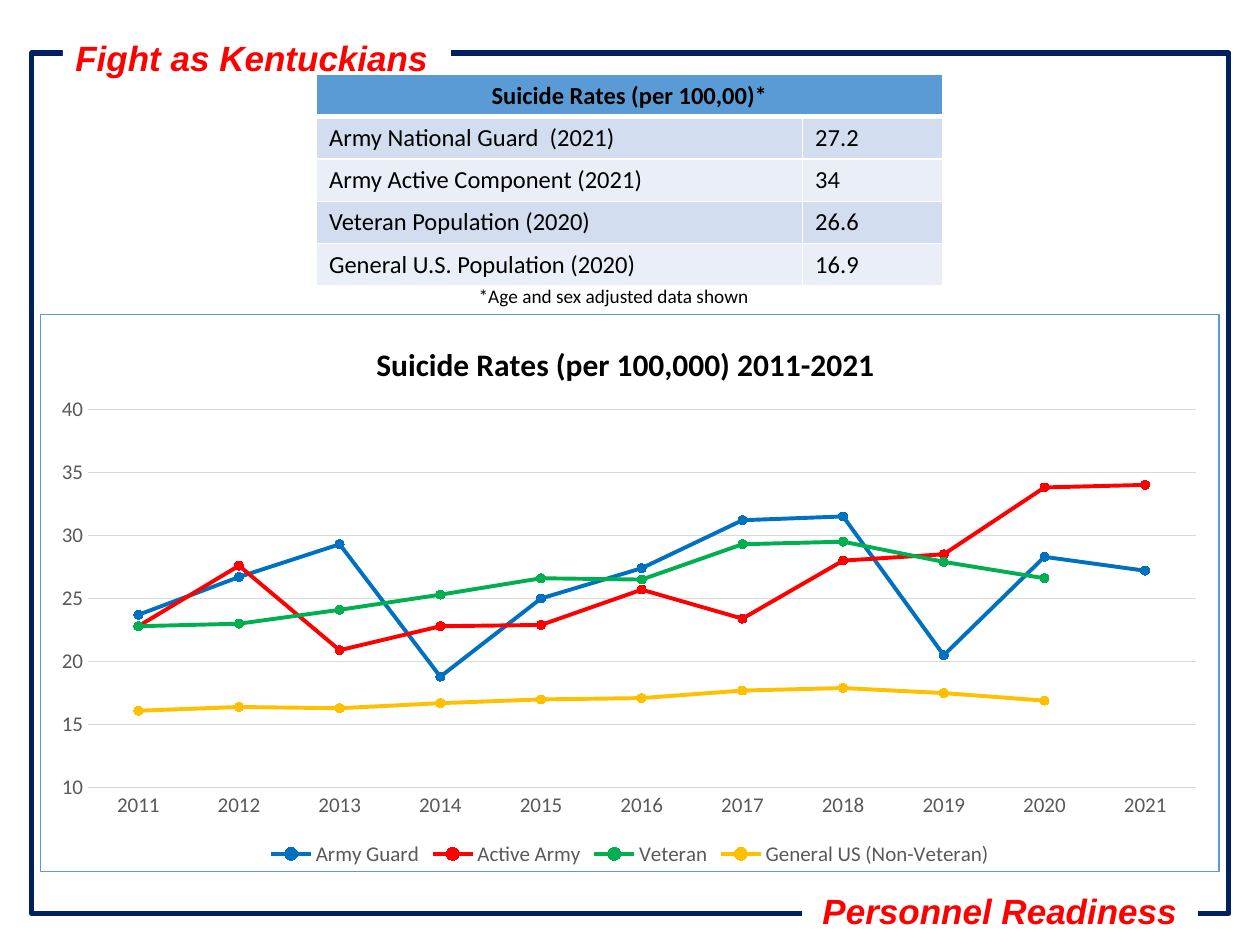
from lxml import etree
from pptx import Presentation
from pptx import util as u
from pptx.chart.data import CategoryChartData
from pptx.dml.color import RGBColor
from pptx.enum import chart as ch
from pptx.enum import shapes, text
from pptx.oxml import parse_xml
from pptx.oxml.ns import nsdecls, qn

COLORS = {
    "navy": "002060", "red": "FF0000", "white": "FFFFFF", "black": "000000",
    "header": "5B9BD5", "band_dark": "D2DEEF", "band_light": "EAEFF7",
    "grid": "D9D9D9", "axis_text": "595959",
    "guard": "0070C0", "active": "FF0000", "veteran": "00B050", "general": "FFC000",
}
MOTTO = {"name": "Arial", "size": u.Pt(20), "bold": True, "italic": True}
CELL = {"name": "Calibri", "size": u.Pt(14), "bold": False}
HEADER = {**CELL, "bold": True}
FOOTNOTE = {"name": "Calibri", "size": u.Pt(11)}
CHART_TITLE = {"name": "Calibri", "size": u.Pt(18), "bold": True}
CHART_LABEL = {"name": "Calibri", "size": u.Pt(12), "bold": False}

RATES = [
    ("Army National Guard  (2021)", "27.2"),
    ("Army Active Component (2021)", "34"),
    ("Veteran Population (2020)", "26.6"),
    ("General U.S. Population (2020)", "16.9"),
]
TRENDS = [
    ("Army Guard", "guard",
     [23.7, 26.7, 29.3, 18.8, 25, 27.4, 31.2, 31.5, 20.5, 28.3, 27.2]),
    ("Active Army", "active",
     [22.8, 27.6, 20.9, 22.8, 22.9, 25.7, 23.4, 28, 28.5, 33.8, 34]),
    ("Veteran", "veteran",
     [22.8, 23, 24.1, 25.3, 26.6, 26.5, 29.3, 29.5, 27.9, 26.6, None]),
    ("General US (Non-Veteran)", "general",
     [16.1, 16.4, 16.3, 16.7, 17, 17.1, 17.7, 17.9, 17.5, 16.9, None]),
]


def rgb(color):
    return RGBColor.from_string(COLORS[color])


def box(*lengths):
    return [u.Cm(length) for length in lengths]


def style_font(font, values, color):
    for attribute, value in values.items():
        setattr(font, attribute, value)
    font.color.rgb = rgb(color)


def paint(fill, color):
    fill.solid()
    fill.fore_color.rgb = rgb(color)


def draw_line(line, color, width):
    line.color.rgb = rgb(color)
    line.width = u.Pt(width)


def add_frame(slide):
    frame = slide.shapes.add_shape(
        shapes.MSO_SHAPE.RECTANGLE, *box(0.64, 1.07, 24.13, 17.35))
    frame.shadow.inherit = False
    frame.fill.background()
    draw_line(frame.line, "navy", 3)


def add_label(slide, place, wording, font, color, align="LEFT", backed=False):
    label = slide.shapes.add_textbox(*box(*place))
    if backed:
        paint(label.fill, "white")
    frame = label.text_frame
    frame.word_wrap = True
    frame.auto_size = text.MSO_AUTO_SIZE.SHAPE_TO_FIT_TEXT
    write(frame, wording, font, color, align)
    return label


def write(frame, wording, font, color, align="LEFT"):
    paragraph = frame.paragraphs[0]
    paragraph.alignment = getattr(text.PP_ALIGN, align)
    run = paragraph.add_run()
    run.text = wording
    style_font(run.font, font, color)


def border_cell(cell, bottom):
    """Give a cell white borders, 1 pt wide except for the bottom one."""
    properties = cell._tc.get_or_add_tcPr()
    for index, (side, width) in enumerate(
            [("lnL", 1), ("lnR", 1), ("lnT", 1), ("lnB", bottom)]):
        properties.insert(index, parse_xml(
            f'<a:{side} {nsdecls("a")} w="{u.Pt(width)}"><a:solidFill>'
            f'<a:srgbClr val="{COLORS["white"]}"/></a:solidFill></a:{side}>'))


def add_rate_table(slide):
    table = slide.shapes.add_table(
        len(RATES) + 1, 2, *box(6.38, 1.5, 12.62, 4.27)).table
    for column, width in zip(table.columns, box(9.8, 2.82)):
        column.width = width
    table.cell(0, 0).merge(table.cell(0, 1))
    write(table.cell(0, 0).text_frame, "Suicide Rates (per 100,00)*",
          HEADER, "black", "CENTER")
    for row, values in enumerate(RATES, 1):
        for column, value in enumerate(values):
            write(table.cell(row, column).text_frame, value, CELL, "black")
    for row in range(len(RATES) + 1):
        band = "header" if row == 0 else ("band_light", "band_dark")[row % 2]
        for column in range(2):
            cell = table.cell(row, column)
            paint(cell.fill, band)
            border_cell(cell, bottom=1 if row else 3)


def layout_xml(inner=False, **fractions):
    """Build a manual layout from fractions of the chart area."""
    target = '<c:layoutTarget val="inner"/>' if inner else ""
    modes = '<c:xMode val="edge"/><c:yMode val="edge"/>'
    values = "".join(f'<c:{key} val="{value}"/>' for key, value in fractions.items())
    return parse_xml(f'<c:layout {nsdecls("c")}><c:manualLayout>{target}{modes}'
                     f'{values}</c:manualLayout></c:layout>')


def place_part(part, layout, index):
    for old in part.findall(qn("c:layout")):
        part.remove(old)
    part.insert(index, layout)


def add_chart_border(chart):
    border = parse_xml(
        f'<c:spPr {nsdecls("c", "a")}><a:noFill/><a:ln w="{u.Pt(0.75)}"><a:solidFill>'
        f'<a:srgbClr val="{COLORS["header"]}"/></a:solidFill></a:ln></c:spPr>')
    chart._chartSpace.find(qn("c:chart")).addnext(border)


def style_axes(chart):
    for axis in (chart.category_axis, chart.value_axis):
        axis.major_tick_mark = axis.minor_tick_mark = ch.XL_TICK_MARK.NONE
        style_font(axis.tick_labels.font, CHART_LABEL, "axis_text")
    draw_line(chart.category_axis.format.line, "grid", 0.75)
    rates = chart.value_axis
    rates.minimum_scale, rates.maximum_scale, rates.major_unit = 10, 40, 5
    rates.format.line.fill.background()
    draw_line(rates.major_gridlines.format.line, "grid", 0.75)


def style_trends(plot):
    plot.vary_by_categories = False
    for series, (_, color, _) in zip(plot.series, TRENDS):
        series.smooth = False
        draw_line(series.format.line, color, 2.25)
        series.marker.style = ch.XL_MARKER_STYLE.CIRCLE
        series.marker.size = 5
        paint(series.marker.format.fill, color)
        draw_line(series.marker.format.line, color, 0.75)


def add_trend_chart(slide):
    data = CategoryChartData()
    data.categories = [str(year) for year in range(2011, 2022)]
    for name, _, values in TRENDS:
        data.add_series(name, values)
    chart = slide.shapes.add_chart(
        ch.XL_CHART_TYPE.LINE_MARKERS, *box(0.81, 6.33, 23.78, 11.25), data).chart
    style_font(chart.font, {"name": "Calibri", "size": u.Pt(10)}, "black")
    write(chart.chart_title.text_frame, "Suicide Rates (per 100,000) 2011-2021",
          CHART_TITLE, "black", "CENTER")
    chart.chart_title.include_in_layout = False
    chart.has_legend = True
    chart.legend.position = ch.XL_LEGEND_POSITION.BOTTOM
    chart.legend.include_in_layout = False
    style_font(chart.legend.font, CHART_LABEL, "axis_text")
    style_axes(chart)
    style_trends(chart.plots[0])
    place_part(chart.chart_title._element, layout_xml(x=0.28, y=0.04), 1)
    place_part(chart._chartSpace.find(".//" + qn("c:plotArea")),
               layout_xml(inner=True, x=0.04, y=0.17, w=0.94, h=0.68), 0)
    add_chart_border(chart)


def main():
    deck = Presentation()
    deck.slide_width, deck.slide_height = box(25.4, 19.05)
    slide = deck.slides.add_slide(deck.slide_layouts[6])
    add_frame(slide)
    add_label(slide, (1.27, 0.61, 7.82, 1.11), "Fight as Kentuckians",
              MOTTO, "red", backed=True)
    readiness = add_label(slide, (16.18, 17.81, 7.95, 1.11), "Personnel Readiness",
                          MOTTO, "red", "CENTER", backed=True)
    draw_line(readiness.line, "white", 0.75)
    add_trend_chart(slide)
    add_rate_table(slide)
    add_label(slide, (9.4, 5.61, 6.63, 0.74), "*Age and sex adjusted data shown",
              FOOTNOTE, "black")
    deck.save("out.pptx")


if __name__ == "__main__":
    main()
